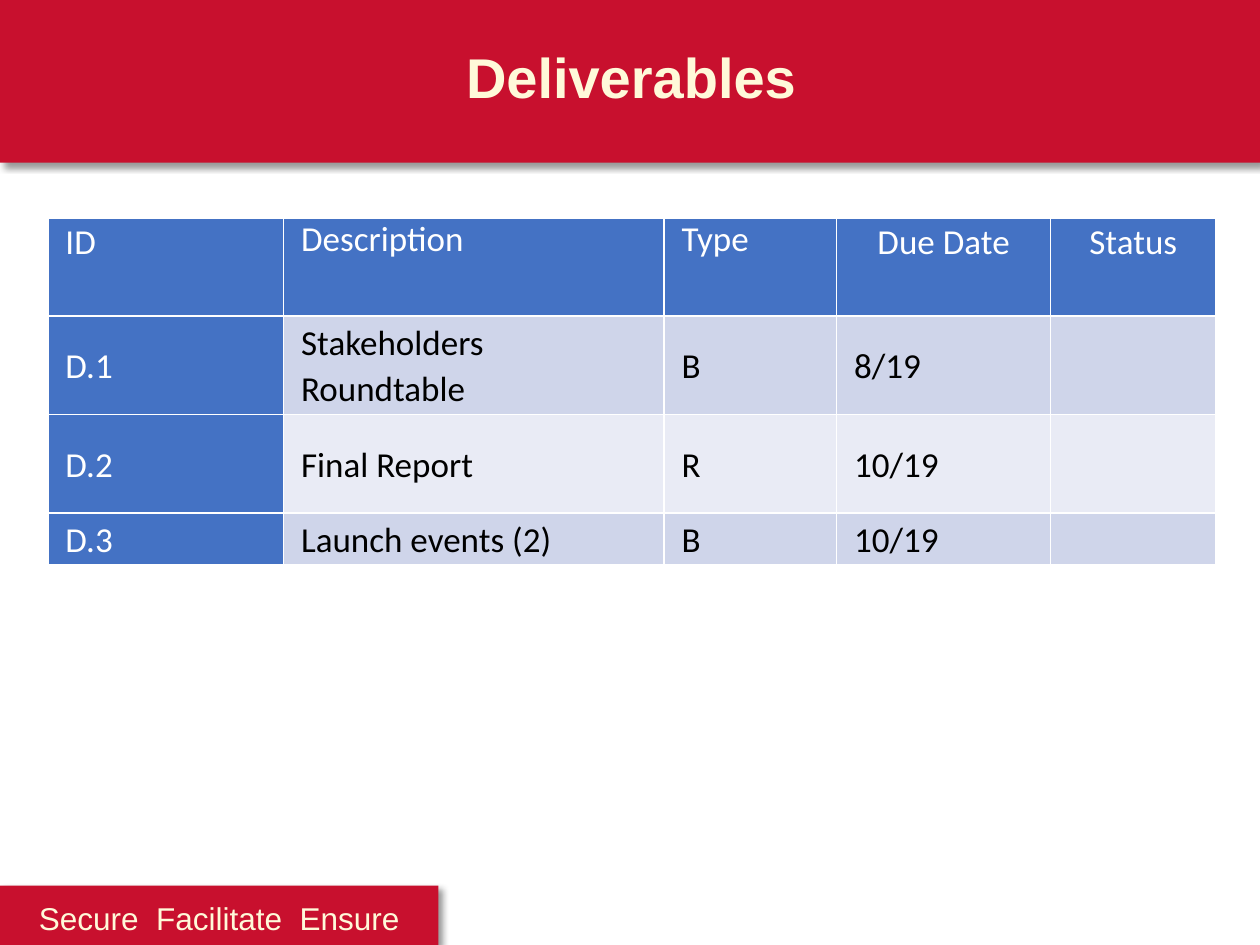
import pptx
import pptx.util
import pptx.dml.color
import pptx.enum.shapes
import pptx.enum.text
import pptx.oxml
import pptx.oxml.ns

Inches, Pt = pptx.util.Inches, pptx.util.Pt
ALIGN = pptx.enum.text.PP_ALIGN
RED, CREAM, BLUE, WHITE, BLACK = "C8102E", "FFF9D9", "4472C4", "FFFFFF", "000000"
BANDS = ["CFD5EA", "E9EBF5"]
COLUMNS = [1.87, 3.02, 1.37, 1.7, 1.31]
ROWS = [0.78, 0.78, 0.78, 0.41]
DELIVERABLES = [
    ["ID", "Description", "Type", "Due Date", "Status"],
    ["D.1", "Stakeholders Roundtable", "B", "8/19", ""],
    ["D.2", "Final Report", "R", "10/19", ""],
    ["D.3", "Launch events (2)", "B", "10/19", ""],
]
HEADER_ALIGN = [ALIGN.JUSTIFY, ALIGN.LEFT, ALIGN.LEFT, ALIGN.CENTER, ALIGN.CENTER]


def rgb(value):
    """Return the colour for a hex string."""
    return pptx.dml.color.RGBColor.from_string(value)


def parse(xml):
    """Parse a DrawingML fragment whose root holds the namespace mark."""
    return pptx.oxml.parse_xml(xml.replace("NS", pptx.oxml.ns.nsdecls("a"), 1))


def style_font(p, size, font, color, bold=False):
    """Format every run of a paragraph."""
    for r in p.runs:
        r.font.size, r.font.name, r.font.bold = Pt(size), font, bold
        r.font.color.rgb = rgb(color)


def add_band(s, left, top, width, height):
    """Draw a red rectangle with a soft shadow to the lower right."""
    sp = s.shapes.add_shape(pptx.enum.shapes.MSO_SHAPE.RECTANGLE,
                            Inches(left), Inches(top), Inches(width), Inches(height))
    sp.fill.solid()
    sp.fill.fore_color.rgb = rgb(RED)
    sp.line.fill.background()
    sp.element.spPr.append(parse(
        f'<a:effectLst NS><a:outerShdw blurRad="{Pt(4)}" dist="{Pt(3)}" dir="2700000" '
        f'algn="tl" rotWithShape="0"><a:srgbClr val="{BLACK}"><a:alpha val="40000"/>'
        '</a:srgbClr></a:outerShdw></a:effectLst>'))


def add_label(s, left, top, width, height, text, size, bold=False, spacing=None):
    """Place a centred cream line of text."""
    tf = s.shapes.add_textbox(Inches(left), Inches(top), Inches(width), Inches(height)).text_frame
    tf.word_wrap = True
    p = tf.paragraphs[0]
    p.text = text
    p.alignment, p.line_spacing = ALIGN.CENTER, spacing
    style_font(p, size, "Arial", CREAM, bold)


def add_title_band(s, left, top, width, height):
    """Draw the title band across the top."""
    add_band(s, left, top, width, height)
    add_label(s, left + 1.01, top + 0.29, 8, 0.64, "Deliverables", 32, bold=True)


def add_footer_tab(s, left, top, width, height):
    """Draw the motto tab in the lower corner."""
    add_band(s, left, top, width, height)
    add_label(s, left, top, width, height, "Secure  Facilitate  Ensure", 18, spacing=1.19)


def style_cell(cell, row, col):
    """Set borders, fill, insets and text format of one cell."""
    tc_pr = cell._tc.get_or_add_tcPr()
    for side in "LRTB":
        tc_pr.append(parse(f'<a:ln{side} NS w="{Pt(1)}"><a:solidFill>'
                           f'<a:srgbClr val="{WHITE}"/></a:solidFill></a:ln{side}>'))
    is_head = row == 0 or col == 0
    cell.fill.solid()
    cell.fill.fore_color.rgb = rgb(BLUE if is_head else BANDS[(row - 1) % 2])
    cell.margin_left = cell.margin_right = Inches(0.14)
    cell.margin_top = cell.margin_bottom = 0
    p = cell.text_frame.paragraphs[0]
    if row:
        cell.vertical_anchor = pptx.enum.text.MSO_ANCHOR.MIDDLE
        p.line_spacing = 1.07
    else:
        p.alignment = HEADER_ALIGN[col]
        if p.alignment != ALIGN.LEFT:
            p.line_spacing, p.space_after = 1.07, Pt(8)
    style_font(p, 20, "Calibri", WHITE if is_head else BLACK)


def add_deliverables_table(s, left, top, width, height):
    """Build the table of deliverables."""
    table = s.shapes.add_table(len(ROWS), len(COLUMNS), Inches(left), Inches(top),
                               Inches(width), Inches(height)).table
    table.first_col = True
    for column, size in zip(table.columns, COLUMNS):
        column.width = Inches(size)
    for i, (row, size) in enumerate(zip(table.rows, ROWS)):
        row.height = Inches(size)
        for j, cell in enumerate(row.cells):
            cell.text_frame.text = DELIVERABLES[i][j]
            style_cell(cell, i, j)


def main():
    """Build and save the slide."""
    prs = pptx.Presentation()
    prs.slide_width, prs.slide_height = Inches(10), Inches(7.5)
    s = prs.slides.add_slide(prs.slide_layouts[6])
    add_title_band(s, 0, 0, 10, 1.29)
    add_footer_tab(s, 0, 7.03, 3.48, 0.47)
    add_deliverables_table(s, 0.38, 1.73, sum(COLUMNS), sum(ROWS))
    prs.save("out.pptx")


if __name__ == "__main__":
    main()
